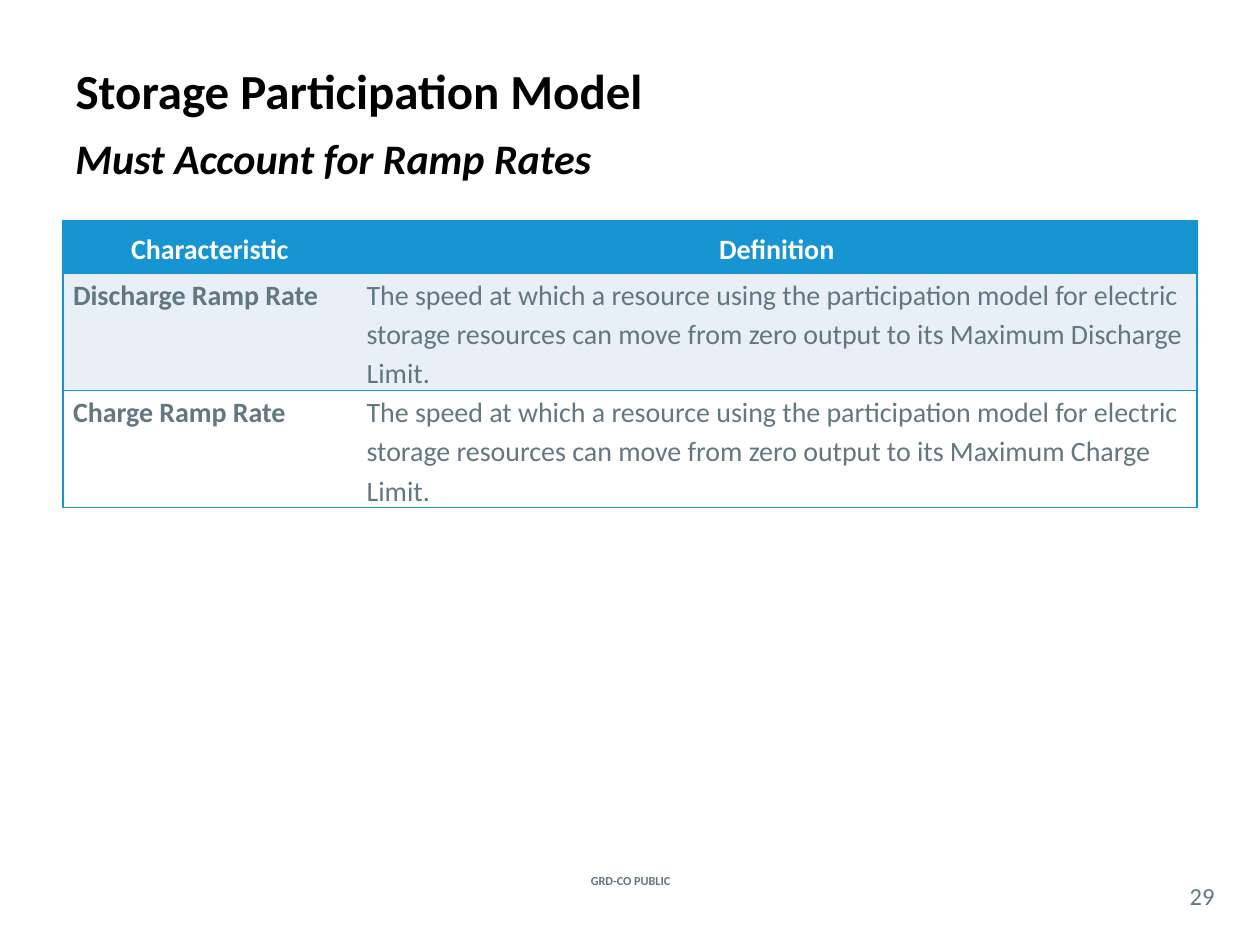
from lxml import etree
from pptx import Presentation
from pptx.dml.color import RGBColor
from pptx.enum.text import MSO_ANCHOR, PP_ALIGN
from pptx.oxml.ns import qn
from pptx.util import Inches, Pt

LEFT, CENTER = PP_ALIGN.LEFT, PP_ALIGN.CENTER
TOP, MIDDLE = MSO_ANCHOR.TOP, MSO_ANCHOR.MIDDLE
FONT = "Calibri"
COLORS = {"black": "000000", "white": "FFFFFF", "blue": "1795D2",
          "band": "E8EFF7", "gray": "62777F"}
ROWS = [
    ("Characteristic", "Definition"),
    ("Discharge Ramp Rate",
     "The speed at which a resource using the participation model for electric "
     "storage resources can move from zero output to its Maximum Discharge Limit."),
    ("Charge Ramp Rate",
     "The speed at which a resource using the participation model for electric "
     "storage resources can move from zero output to its Maximum Charge Limit."),
]
ROW_FILLS = ("blue", "band", "white")
ROW_HEIGHTS = (0.42, 0.93, 0.93)
COL_WIDTHS = (2.33, 6.67)


def add_run(p, text, size, color, bold=False, italic=False):
    """Append a formatted run to a paragraph."""
    r = p.add_run()
    r.text = text
    r.font.name, r.font.size = FONT, Pt(size)
    r.font.bold, r.font.italic = bold, italic
    r.font.color.rgb = RGBColor.from_string(COLORS[color])


def add_title(s, left, top, width, height):
    """Place and format the title placeholder."""
    sp = s.shapes.title
    sp.left, sp.top, sp.width, sp.height = map(Inches, (left, top, width, height))
    tf = sp.text_frame
    tf.vertical_anchor = MIDDLE
    p = tf.paragraphs[0]
    p.alignment = LEFT
    add_run(p, "Storage Participation Model", 28, "black", bold=True)


def add_label(s, box, text, size, color, align=LEFT, anchor=MIDDLE,
              inset=None, bold=False, italic=False):
    """Add a one-paragraph text box."""
    tf = s.shapes.add_textbox(*map(Inches, box)).text_frame
    tf.word_wrap = True
    tf.vertical_anchor = anchor
    if inset is not None:
        tf.margin_left = tf.margin_right = Inches(inset)
        tf.margin_top = tf.margin_bottom = Inches(inset)
    p = tf.paragraphs[0]
    p.alignment = align
    add_run(p, text, size, color, bold, italic)


def set_borders(cell, ruled_sides):
    """Rule the given sides of a cell in blue and clear the others."""
    tc_pr = cell._tc.get_or_add_tcPr()
    for i, side in enumerate("LRTB"):
        ln = etree.Element(qn(f"a:ln{side}"), w=str(Pt(1)))
        if side in ruled_sides:
            fill = etree.SubElement(ln, qn("a:solidFill"))
            etree.SubElement(fill, qn("a:srgbClr"), val=COLORS["blue"])
        else:
            etree.SubElement(ln, qn("a:noFill"))
        tc_pr.insert(i, ln)


def add_ramp_table(s, left, top):
    """Add the table of ramp rate definitions."""
    box = (left, top, sum(COL_WIDTHS), sum(ROW_HEIGHTS))
    table = s.shapes.add_table(len(ROWS), len(COL_WIDTHS), *map(Inches, box)).table
    table.horz_banding = False
    for column, width in zip(table.columns, COL_WIDTHS):
        column.width = Inches(width)
    for i, texts in enumerate(ROWS):
        table.rows[i].height = Inches(ROW_HEIGHTS[i])
        header = i == 0
        for j, text in enumerate(texts):
            cell = table.cell(i, j)
            cell.fill.solid()
            cell.fill.fore_color.rgb = RGBColor.from_string(COLORS[ROW_FILLS[i]])
            cell.margin_left = cell.margin_right = Inches(0.08)
            cell.margin_top = cell.margin_bottom = 0
            cell.vertical_anchor = MIDDLE if header else TOP
            p = cell.text_frame.paragraphs[0]
            p.alignment = CENTER if header else LEFT
            p.line_spacing = 1.15
            p.space_after = Pt(10)
            add_run(p, text, 16, "white" if header else "gray", bold=header or j == 0)
            set_borders(cell, "LTB" if j == 0 else "RTB")


def main():
    """Build and save the slide."""
    prs = Presentation()
    prs.slide_width, prs.slide_height = Inches(10), Inches(7.5)
    s = prs.slides.add_slide(prs.slide_layouts[5])
    add_title(s, 0.5, 0.42, 9, 0.58)
    add_label(s, (0.5, 1, 9, 0.5), "Must Account for Ramp Rates", 24, "black",
              anchor=TOP, bold=True, italic=True)
    add_ramp_table(s, 0.5, 1.75)
    add_label(s, (4.27, 6.72, 1.47, 0.54), "GRD-CO PUBLIC", 7, "gray",
              align=CENTER, bold=True)
    add_label(s, (9.33, 6.96, 0.42, 0.29), "29", 14, "gray", align=CENTER, inset=0)
    prs.save("out.pptx")


if __name__ == "__main__":
    main()
